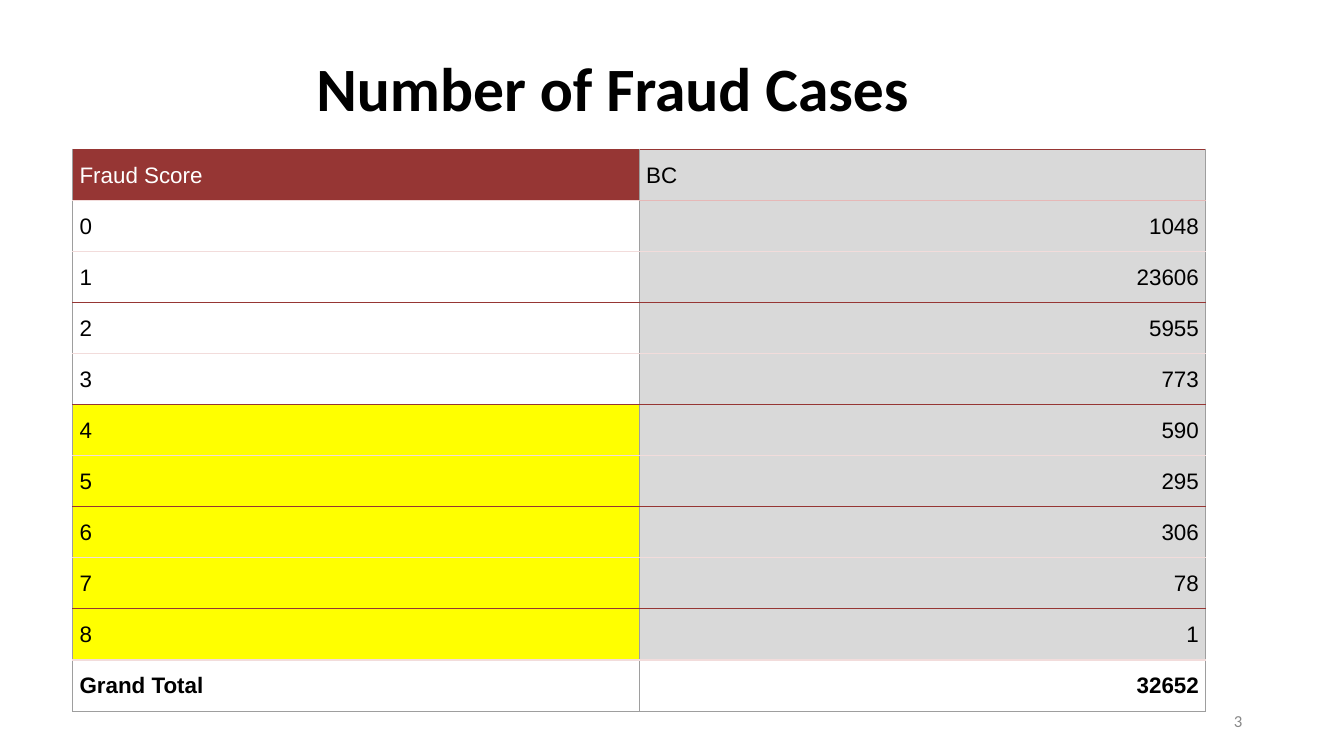
from lxml.etree import SubElement
from pptx import Presentation
from pptx.dml.color import RGBColor
from pptx.enum.text import MSO_ANCHOR, PP_ALIGN
from pptx.oxml.ns import qn
from pptx.util import Inches, Pt

BLACK = RGBColor(0x00, 0x00, 0x00)
WHITE = RGBColor(0xFF, 0xFF, 0xFF)
NUMBER_GRAY = RGBColor(0x88, 0x88, 0x88)
BORDER_GRAY = RGBColor(0x9E, 0x9E, 0x9E)
CELL_GRAY = RGBColor(0xD9, 0xD9, 0xD9)
MAROON = RGBColor(0x96, 0x36, 0x34)
PINK = RGBColor(0xF2, 0xDC, 0xDB)
ROSE = RGBColor(0xE6, 0xB8, 0xB7)
YELLOW = RGBColor(0xFF, 0xFF, 0x00)

HEADER = ("Fraud Score", "BC")
CASES_BY_SCORE = (1048, 23606, 5955, 773, 590, 295, 306, 78, 1)
FIRST_HIGH_SCORE = 4
ROW_HEIGHT = 0.48


def format_paragraph(paragraph, font_name, size, color, bold=False, alignment=PP_ALIGN.LEFT):
    paragraph.alignment = alignment
    font = paragraph.font
    font.name = font_name
    font.size = Pt(size)
    font.bold = bold
    font.color.rgb = color


def add_title(slide, text):
    title = slide.shapes.title
    title.left, title.top = Inches(0.33), Inches(0.18)
    title.width, title.height = Inches(11.5), Inches(1.45)
    title.text_frame.text = text
    title.text_frame.vertical_anchor = MSO_ANCHOR.MIDDLE
    paragraph = title.text_frame.paragraphs[0]
    paragraph.line_spacing = 0.9
    format_paragraph(paragraph, "Calibri", 44, BLACK, True, PP_ALIGN.CENTER)


def add_slide_number(slide, text):
    box = slide.shapes.add_textbox(Inches(9.42), Inches(6.95), Inches(3), Inches(0.4))
    frame = box.text_frame
    frame.word_wrap = True
    frame.vertical_anchor = MSO_ANCHOR.MIDDLE
    frame.text = text
    format_paragraph(frame.paragraphs[0], "Calibri", 12, NUMBER_GRAY, alignment=PP_ALIGN.RIGHT)


def set_borders(cell, top, bottom):
    """Draw gray sides and the given top and bottom colours; lines go before the fill."""
    properties = cell._tc.get_or_add_tcPr()
    sides = (("a:lnL", BORDER_GRAY), ("a:lnR", BORDER_GRAY), ("a:lnT", top), ("a:lnB", bottom))
    for position, (tag, color) in enumerate(sides):
        width = Pt(0.75) if color == BORDER_GRAY else Pt(1)
        line = SubElement(properties, qn(tag), w=str(width))
        SubElement(SubElement(line, qn("a:solidFill")), qn("a:srgbClr"), val=str(color))
        properties.insert(position, line)


def fill_cell(cell, text, fill, color=BLACK, bold=False, alignment=PP_ALIGN.LEFT):
    cell.margin_left = cell.margin_right = Inches(0.07)
    cell.margin_top = cell.margin_bottom = Inches(0.1)
    cell.text = text
    paragraph = cell.text_frame.paragraphs[0]
    paragraph.line_spacing = 1.15
    format_paragraph(paragraph, "Arial", 16, color, bold, alignment)
    if fill is None:
        cell.fill.background()
    else:
        cell.fill.solid()
        cell.fill.fore_color.rgb = fill


def add_fraud_table(slide):
    row_count = len(CASES_BY_SCORE) + 2
    total_row = row_count - 1
    table = slide.shapes.add_table(
        row_count, 2, Inches(0.72), Inches(1.48), Inches(11.24), Inches(ROW_HEIGHT * row_count)
    ).table
    table.first_row = table.horz_banding = False
    for column in table.columns:
        column.width = Inches(5.62)
    for row in table.rows:
        row.height = Inches(ROW_HEIGHT)

    fill_cell(table.cell(0, 0), HEADER[0], MAROON, WHITE)
    fill_cell(table.cell(0, 1), HEADER[1], CELL_GRAY)
    for score, cases in enumerate(CASES_BY_SCORE):
        score_fill = YELLOW if score >= FIRST_HIGH_SCORE else None
        fill_cell(table.cell(score + 1, 0), str(score), score_fill)
        fill_cell(table.cell(score + 1, 1), str(cases), CELL_GRAY, alignment=PP_ALIGN.RIGHT)
    fill_cell(table.cell(total_row, 0), "Grand Total", None, bold=True)
    fill_cell(table.cell(total_row, 1), str(sum(CASES_BY_SCORE)), None,
              bold=True, alignment=PP_ALIGN.RIGHT)

    for column, header_line in enumerate((PINK, ROSE)):
        lines = [MAROON, header_line]
        lines += [PINK if row % 2 else MAROON for row in range(1, total_row)]
        lines.append(BORDER_GRAY)
        for row in range(row_count):
            set_borders(table.cell(row, column), lines[row], lines[row + 1])


def main():
    presentation = Presentation()
    presentation.slide_width = Inches(13.33)
    presentation.slide_height = Inches(7.5)
    slide = presentation.slides.add_slide(presentation.slide_layouts[5])
    add_title(slide, "Number of Fraud Cases")
    add_slide_number(slide, "3")
    add_fraud_table(slide)
    presentation.save("out.pptx")


if __name__ == "__main__":
    main()
